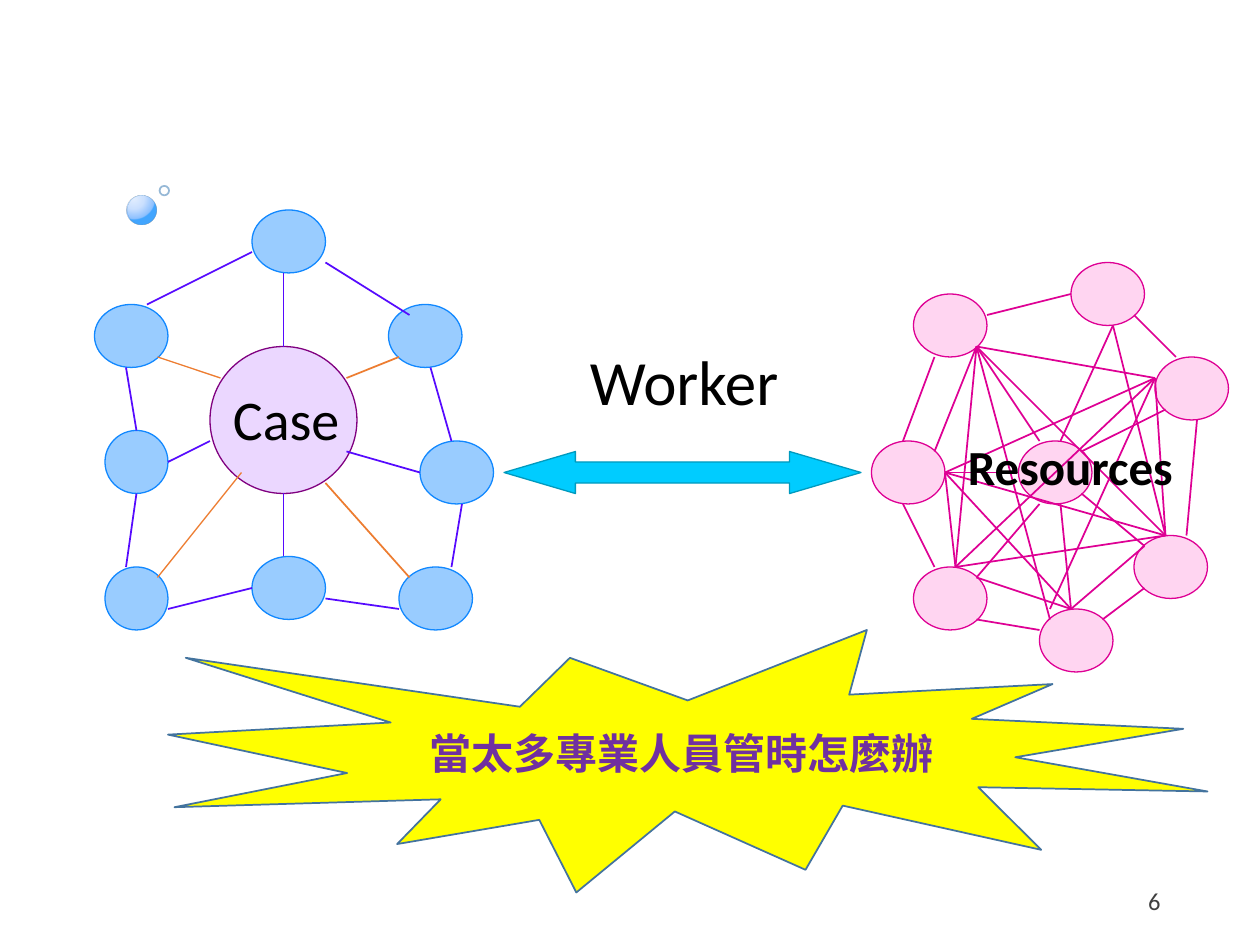
from lxml.etree import SubElement
from pptx import Presentation
from pptx.dml.color import RGBColor
from pptx.enum.shapes import MSO_CONNECTOR, MSO_SHAPE as SHP
from pptx.enum.text import MSO_ANCHOR as ANC, PP_ALIGN as AL
from pptx.oxml import parse_xml
from pptx.oxml.ns import nsdecls, qn
from pptx.util import Inches, Pt

prs = Presentation()
prs.slide_width, prs.slide_height = Inches(10), Inches(7.5)
U = prs.slide_width / 120
s = prs.slides.add_slide(prs.slide_layouts[6])
rgb = RGBColor.from_string


def shape(kind, box, fill, line, width=0.75):
    sp = s.shapes.add_shape(kind, *[round(v * U) for v in box])
    sp.shadow.inherit = False
    if fill:
        sp.fill.solid()
        sp.fill.fore_color.rgb = rgb(fill)
    else:
        sp.fill.background()
    sp.line.color.rgb = rgb(line)
    sp.line.width = Pt(width)
    return sp


def write(sp, text, size, color, bold=False, align=AL.LEFT, anchor=ANC.TOP):
    tf = sp.text_frame
    tf.word_wrap = True
    tf.vertical_anchor = anchor
    p = tf.paragraphs[0]
    p.text = text
    p.alignment = align
    p.font.name, p.font.size, p.font.bold = "Calibri", Pt(size), bold
    p.font.color.rgb = rgb(color)


drop = shape(SHP.OVAL, (12.1, 18.6, 2.8, 2.8), None, "5194D1", 0.16)
ring = shape(SHP.OVAL, (15.2, 17.7, 0.9, 0.9), None, "5089BC", 1)
for sp in (drop, ring):
    clr = sp.line._ln.find(".//" + qn("a:srgbClr"))
    SubElement(clr, qn("a:alpha"), val="60000")
stops = [(0, "E2EEFF", 95), (50, "C5DDFF", 90), (95, "7DB8FF", 88), (100, "2397FF", 85)]
gs = "".join(
    f'<a:gs pos="{pos * 1000}"><a:srgbClr val="{c}"><a:alpha val="{a * 1000}"/></a:srgbClr></a:gs>'
    for pos, c, a in stops)
grad = parse_xml(
    f'<a:gradFill {nsdecls("a")}><a:gsLst>{gs}</a:gsLst><a:path path="circle">'
    '<a:fillToRect l="25000" t="12000" r="75000" b="88000"/></a:path></a:gradFill>')
spPr = drop._element.spPr
spPr.replace(spPr.find(qn("a:noFill")), grad)

shape(SHP.OVAL, (20, 33, 14, 14), "EBD7FF", "800080")
case_nodes = [(9, 29, 7), (10, 41, 6), (10, 54, 6), (24, 53, 7),
              (24, 20, 7), (37, 29, 7), (40, 42, 7), (38, 54, 7)]
for x, y, w in case_nodes:
    shape(SHP.OVAL, (x, y, w, 6), "99CCFF", "1188FF")
resource_nodes = [(87, 28), (97, 42), (102, 25), (110, 34),
                  (99, 58), (87, 54), (83, 42), (108, 51)]
for x, y in resource_nodes:
    shape(SHP.OVAL, (x, y, 7, 6), "FFD5F1", "DE0094")

case_links = [
    (27, 26, 27, 33), (31, 25, 39, 30), (41, 35, 43, 42), (44, 48, 43, 54),
    (38, 58, 31, 57), (33, 43, 40, 45), (27, 47, 27, 53), (16, 58, 24, 56),
    (13, 47, 12, 54), (16, 44, 20, 42), (12, 35, 13, 41), (14, 29, 24, 24)]
resource_links = [
    (89, 34, 86, 42), (86, 48, 89, 54), (93, 59, 99, 60), (105, 59, 109, 56),
    (113, 51, 114, 40), (108, 30, 112, 34), (94, 30, 102, 28), (106, 31, 101, 42),
    (93, 55, 99, 48), (103, 47, 109, 52), (111, 39, 103, 43)]
hubs = {
    (93, 33): [(99, 42), (110, 36), (111, 51), (100, 59), (91, 54), (89, 43)],
    (110, 36): [(90, 45), (91, 54), (100, 58), (111, 51)],
    (111, 51): [(106, 31), (90, 45), (91, 54)],
    (102, 58): [(101, 48), (109, 52), (93, 55), (90, 45)],
    (90, 45): [(97, 45), (91, 54)]}
resource_links += [hub + end for hub, ends in hubs.items() for end in ends]
thin_links = [(15, 34, 21, 36), (15, 55, 23, 45)]
thick_links = [(33, 36, 38, 34), (31, 46, 39, 55)]
for links, color, width in [(case_links, "560AFE", 1), (resource_links, "DE0094", 1),
                            (thin_links, "ED7D31", 0.75), (thick_links, "ED7D31", 1)]:
    for ends in links:
        cn = s.shapes.add_connector(MSO_CONNECTOR.STRAIGHT, *[round(v * U) for v in ends])
        cn.line.color.rgb = rgb(color)
        cn.line.width = Pt(width)
        SubElement(cn._element.spPr, qn("a:effectLst"))

arrow = shape(SHP.LEFT_RIGHT_ARROW, (48, 43, 34, 4), "00CCFF", "009ABE")
arrow.adjustments[0], arrow.adjustments[1] = 0.5, 1.7

labels = [
    ((21, 36, 16, 7.5), "Case", 32, "000000", False, AL.LEFT, ANC.TOP),
    ((91, 41, 24, 6.9), "Resources", 28, "000000", True, AL.LEFT, ANC.TOP),
    ((55, 32, 21, 8.4), "Worker", 36, "000000", False, AL.LEFT, ANC.TOP),
    ((84.7, 83.4, 27, 4.8), "6", 14, "404040", False, AL.RIGHT, ANC.MIDDLE)]
for box, *style in labels:
    write(s.shapes.add_textbox(*[round(v * U) for v in box]), *style)

seal = shape(SHP.EXPLOSION1, (16, 60, 99, 25), "FFFF00", "43739E", 1)
write(seal, "當太多專業人員管時怎麼辦", 24, "7030A0", True, AL.CENTER, ANC.MIDDLE)

prs.save("out.pptx")
